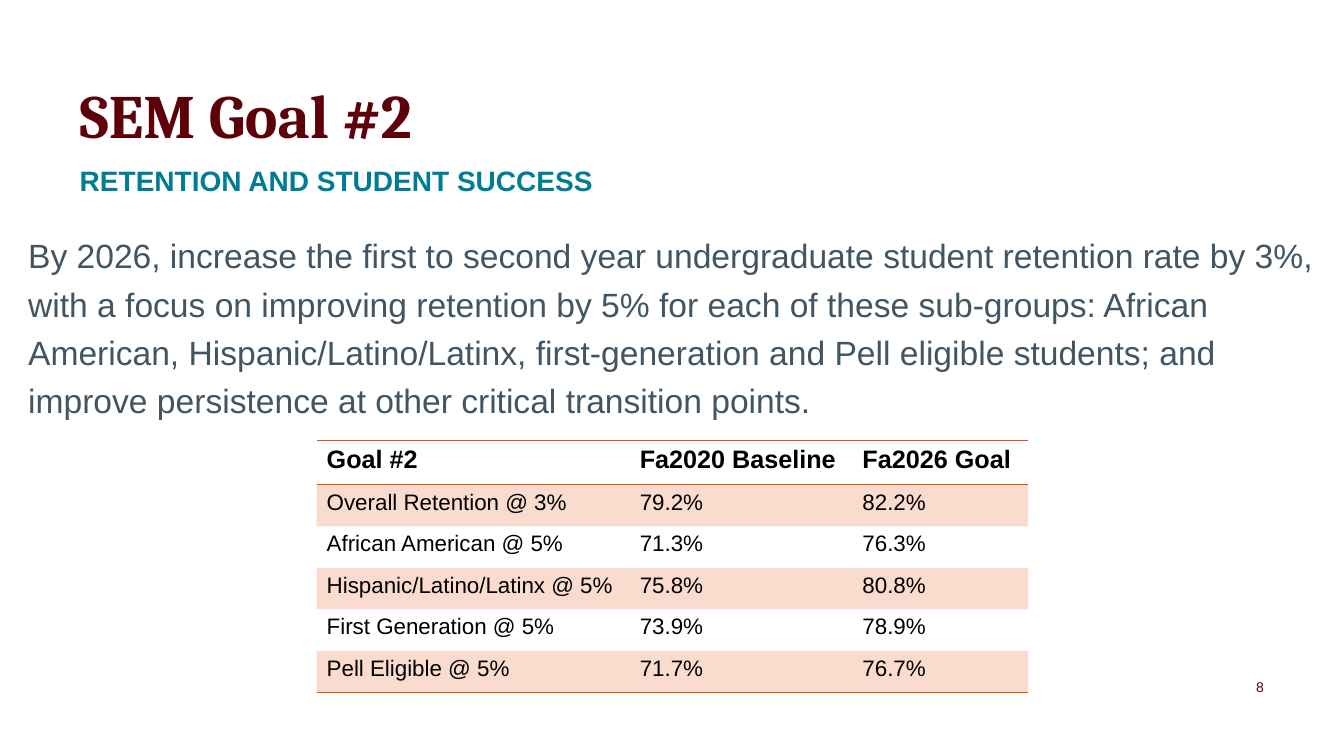
from lxml import etree
from pptx import Presentation
from pptx.dml.color import RGBColor
from pptx.enum.text import MSO_ANCHOR, PP_ALIGN
from pptx.oxml.ns import qn
from pptx.util import Cm, Pt

TOP, MIDDLE, BOTTOM = MSO_ANCHOR.TOP, MSO_ANCHOR.MIDDLE, MSO_ANCHOR.BOTTOM
LEFT, RIGHT = PP_ALIGN.LEFT, PP_ALIGN.RIGHT
NO_STYLE = "{2D5ABB26-0587-4C30-8999-92F81FD0307C}"
BLANK = 6

COLORS = {"maroon": "5E0009", "teal": "017C96", "slate": "425563",
          "orange": "E35205", "black": "000000"}

FORMATS = {
    "title": {"name": "Cambria", "size": Pt(44), "bold": True},
    "subtitle": {"name": "Arial", "size": Pt(20), "bold": True},
    "body": {"name": "Arial", "size": Pt(24), "bold": False},
    "number": {"name": "Arial", "size": Pt(10), "bold": False},
    "head": {"name": "Arial", "size": Pt(18), "bold": True},
    "cell": {"name": "Arial", "size": Pt(16), "bold": False},
}

GOAL = (
    "By 2026, increase the first to second year undergraduate student "
    "retention rate by 3%, with a focus on improving retention by 5% for each "
    "of these sub-groups: African American, Hispanic/Latino/Latinx, "
    "first-generation and Pell eligible students; and improve persistence at "
    "other critical transition points."
)

RATES = [
    ("Goal #2", "Fa2020 Baseline", "Fa2026 Goal"),
    ("Overall Retention @ 3%", "79.2%", "82.2%"),
    ("African American @ 5%", "71.3%", "76.3%"),
    ("Hispanic/Latino/Latinx @ 5%", "75.8%", "80.8%"),
    ("First Generation @ 5%", "73.9%", "78.9%"),
    ("Pell Eligible @ 5%", "71.7%", "76.7%"),
]
COL_SHARES = (0.44, 0.313, 0.247)
HEAD_SHARE = 0.176


def write(p, text, fmt, color):
    r = p.add_run()
    r.text = text
    for key, value in FORMATS[fmt].items():
        setattr(r.font, key, value)
    r.font.color.rgb = RGBColor.from_string(COLORS[color])


def add_text(slide, box, text, fmt, color, anchor=TOP, align=LEFT, spacing=1.0):
    """Place one paragraph in a box (left, top, width, height in cm)."""
    tf = slide.shapes.add_textbox(*map(Cm, box)).text_frame
    tf.word_wrap = True
    tf.vertical_anchor = anchor
    for side in ("left", "top", "right", "bottom"):
        setattr(tf, f"margin_{side}", 0)
    p = tf.paragraphs[0]
    p.alignment = align
    p.line_spacing = spacing
    write(p, text, fmt, color)


def add_header(slide, box):
    left, top, width, height = box
    add_text(slide, (left, top, width, height * 0.6), "SEM Goal #2",
             "title", "maroon", anchor=BOTTOM)
    add_text(slide, (left, top + height * 0.7, width, height * 0.3),
             "RETENTION AND STUDENT SUCCESS", "subtitle", "teal")


def add_border(cell, tag):
    ln = etree.SubElement(cell._tc.get_or_add_tcPr(), qn(tag), w=str(Pt(1)))
    fill = etree.SubElement(ln, qn("a:solidFill"))
    etree.SubElement(fill, qn("a:srgbClr"), val=COLORS["orange"])


def tint(cell):
    """Fill a cell with orange at 20% opacity."""
    cell.fill.solid()
    cell.fill.fore_color.rgb = RGBColor.from_string(COLORS["orange"])
    color = cell._tc.tcPr.find(".//" + qn("a:solidFill") + "[last()]/" + qn("a:srgbClr"))
    fills = cell._tc.tcPr.findall(qn("a:solidFill"))
    color = fills[0].find(qn("a:srgbClr"))
    etree.SubElement(color, qn("a:alpha"), val="20000")


def add_rates(slide, box):
    left, top, width, height = box
    last = len(RATES) - 1
    table = slide.shapes.add_table(len(RATES), len(COL_SHARES),
                                   *map(Cm, box)).table
    table.horz_banding = False
    table._tbl.tblPr.find(qn("a:tableStyleId")).text = NO_STYLE
    for col, share in zip(table.columns, COL_SHARES):
        col.width = Cm(width * share)
    for i, values in enumerate(RATES):
        share = (1 - HEAD_SHARE) / last if i else HEAD_SHARE
        table.rows[i].height = Cm(height * share)
        for j, value in enumerate(values):
            cell = table.cell(i, j)
            write(cell.text_frame.paragraphs[0], value,
                  "cell" if i else "head", "black")
            if i == 0:
                add_border(cell, "a:lnT")
            if i in (0, last):
                add_border(cell, "a:lnB")
            if i % 2:
                tint(cell)
            else:
                cell.fill.background()


def main():
    prs = Presentation()
    prs.slide_width, prs.slide_height = Cm(33.87), Cm(19.05)
    slide = prs.slides.add_slide(prs.slide_layouts[BLANK])
    add_text(slide, (29.95, 16.84, 1.9, 0.94), "8", "number", "maroon",
             anchor=MIDDLE, align=RIGHT)
    add_text(slide, (0.71, 5.72, 32.44, 11.13), GOAL, "body", "slate",
             spacing=1.2)
    add_header(slide, (2.01, 1.9, 29.85, 3.18))
    add_rates(slide, (7.98, 11.1, 17.93, 6.35))
    prs.save("out.pptx")


if __name__ == "__main__":
    main()
